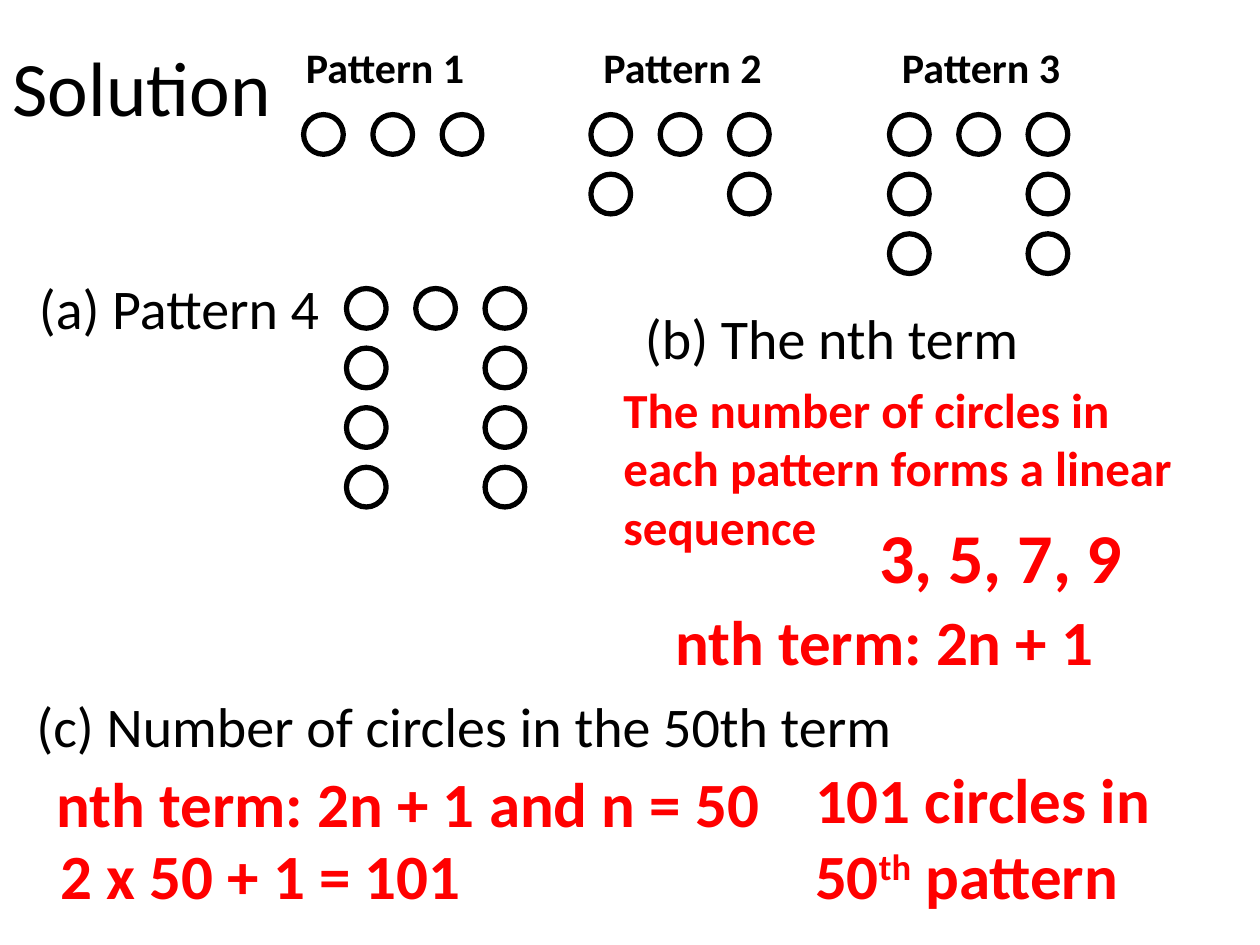
from dataclasses import dataclass

from pptx import Presentation
from pptx.dml.color import RGBColor
from pptx.enum.shapes import MSO_SHAPE
from pptx.enum.text import MSO_ANCHOR, MSO_AUTO_SIZE, PP_ALIGN
from pptx.util import Inches, Pt

BLACK, RED, WHITE = "000000", "FF0000", "FFFFFF"
CIRCLE = 0.315
COLUMN_STEP, ROW_STEP = 0.55, 0.473


@dataclass
class Label:
    text: str
    left: float
    top: float
    width: float
    height: float
    size: int
    color: str = BLACK
    bold: bool = False
    wrap: bool = False
    superscript: str = ""
    ending: str = ""


@dataclass
class Pattern:
    rows: int
    left: float
    top: float


def rgb(color: str) -> RGBColor:
    return RGBColor.from_string(color)


def add_run(p, text: str, size: int, color: str, bold: bool = False):
    r = p.add_run()
    r.text = text
    formats = {"name": "Calibri", "size": Pt(size), "bold": bold}
    for name, value in formats.items():
        setattr(r.font, name, value)
    r.font.color.rgb = rgb(color)
    return r


def add_label(s, label: Label) -> None:
    box = s.shapes.add_textbox(Inches(label.left), Inches(label.top),
                               Inches(label.width), Inches(label.height))
    tf = box.text_frame
    tf.word_wrap = label.wrap
    tf.auto_size = MSO_AUTO_SIZE.SHAPE_TO_FIT_TEXT
    p = tf.paragraphs[0]
    style = (label.size, label.color, label.bold)
    add_run(p, label.text, *style)
    if label.superscript:
        r = add_run(p, label.superscript, *style)
        r.font._element.set("baseline", "30000")
        add_run(p, label.ending, *style)


def add_circle(s, left: float, top: float) -> None:
    sp = s.shapes.add_shape(MSO_SHAPE.OVAL, Inches(left), Inches(top),
                            Inches(CIRCLE), Inches(CIRCLE))
    sp.shadow.inherit = False
    sp.fill.solid()
    sp.fill.fore_color.rgb = rgb(WHITE)
    sp.line.color.rgb = rgb(BLACK)
    sp.line.width = Pt(3)


def add_pattern(s, pattern: Pattern) -> None:
    """Full first row, then only the two outer circles."""
    for row in range(pattern.rows):
        for column in (0, 1, 2) if row == 0 else (0, 2):
            add_circle(s, pattern.left + column * COLUMN_STEP,
                       pattern.top + row * ROW_STEP)


def add_title(s, text: str) -> None:
    title = s.shapes.title
    title.left, title.top = Inches(0), Inches(0)
    title.width, title.height = Inches(8.62), Inches(1.45)
    tf = title.text_frame
    tf.auto_size = MSO_AUTO_SIZE.NONE
    tf.vertical_anchor = MSO_ANCHOR.MIDDLE
    p = tf.paragraphs[0]
    p.alignment = PP_ALIGN.LEFT
    p.line_spacing = 0.9
    add_run(p, text, 44, BLACK)


PATTERNS = [
    Pattern(1, 2.41, 0.91),
    Pattern(2, 4.69, 0.91),
    Pattern(3, 7.06, 0.91),
    Pattern(4, 2.75, 2.29),
]

HEADINGS = [
    Label(f"Pattern {number}", left, 0.28, 1.64, 0.51, 24, bold=True)
    for number, left in enumerate((2.33, 4.69, 7.06), start=1)
]

QUESTIONS = [
    Label("(a) Pattern 4", 0.21, 2.12, 2.46, 0.64, 32),
    Label("(b) The nth term", 5.02, 2.36, 3.2, 0.64, 32),
    Label("(c) Number of circles in the 50th term", 0.19, 5.44, 7.11, 0.64, 32),
]

ANSWERS = [
    Label("The number of circles in each pattern forms a linear sequence",
          4.85, 2.96, 4.63, 1.51, 28, RED, True, True),
    Label("3, 5, 7, 9", 6.88, 4.03, 2.31, 0.77, 40, RED, True, True),
    Label("nth term: 2n + 1", 5.26, 4.73, 3.89, 0.71, 36, RED, True, True),
    Label("nth term: 2n + 1 and n = 50", 0.35, 6.02, 5.95, 0.71, 36, RED, True, True),
    Label("2 x 50 + 1 = 101", 0.38, 6.59, 5.95, 0.71, 36, RED, True, True),
    Label("101 circles in 50", 6.37, 5.99, 3.21, 1.31, 36, RED, True, True,
          superscript="th", ending=" pattern"),
]


def main() -> None:
    prs = Presentation()
    prs.slide_width, prs.slide_height = Inches(10), Inches(7.5)
    s = prs.slides.add_slide(prs.slide_layouts[5])

    add_title(s, "Solution")

    # Circle patterns
    for pattern in PATTERNS:
        add_pattern(s, pattern)

    # Headings, questions and worked answers
    for label in HEADINGS + QUESTIONS + ANSWERS:
        add_label(s, label)

    prs.save("out.pptx")


if __name__ == "__main__":
    main()
